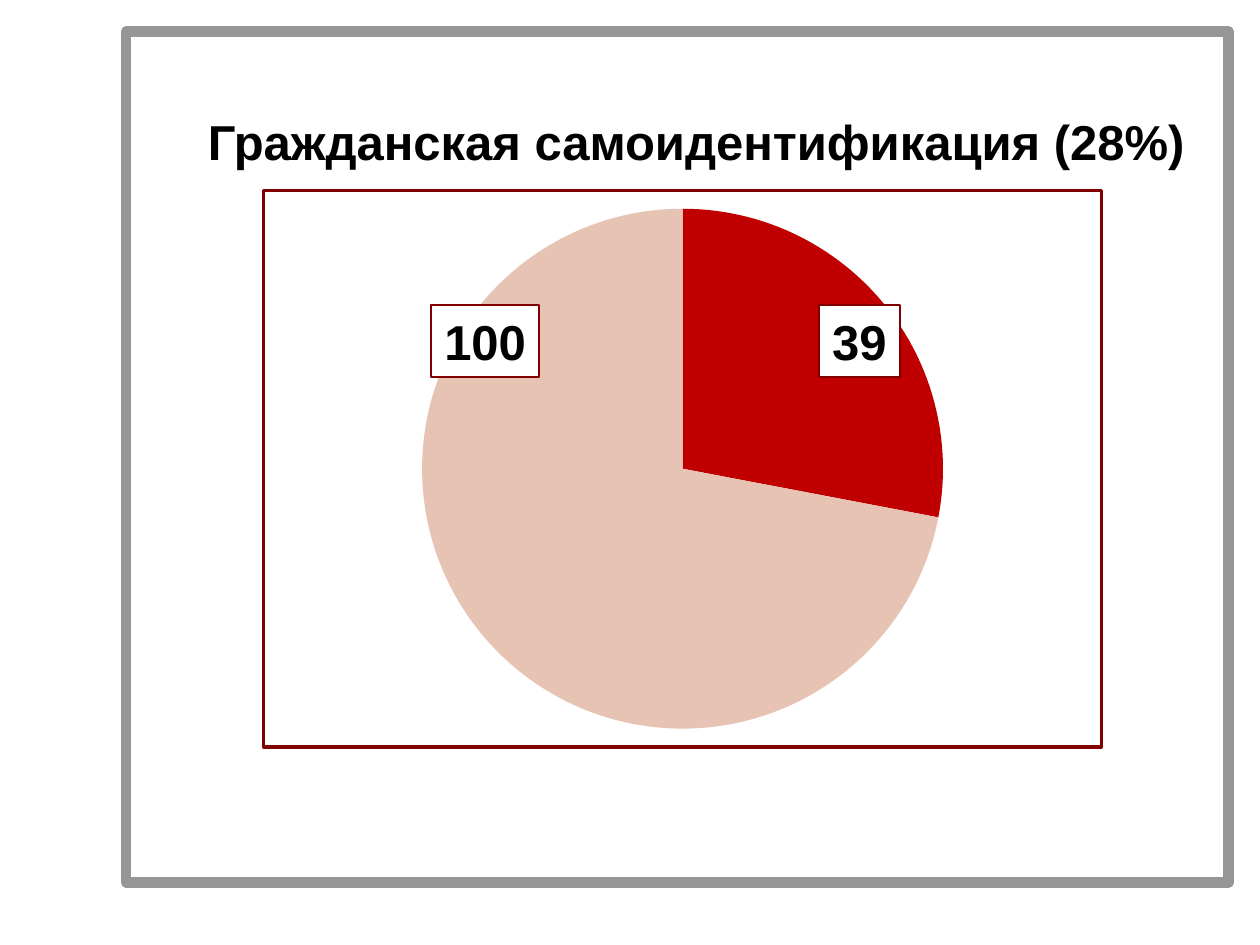
from lxml import etree
from pptx import Presentation
from pptx.chart.data import CategoryChartData
from pptx.dml.color import RGBColor
from pptx.enum.chart import XL_CHART_TYPE
from pptx.enum.shapes import MSO_SHAPE
from pptx.enum.text import MSO_ANCHOR, MSO_AUTO_SIZE, PP_ALIGN
from pptx.oxml import parse_xml
from pptx.oxml.ns import nsdecls, qn
from pptx.util import Cm, Pt

PIE = XL_CHART_TYPE.PIE
RECTANGLE = MSO_SHAPE.RECTANGLE
MIDDLE = MSO_ANCHOR.MIDDLE
FIT_SHAPE = MSO_AUTO_SIZE.SHAPE_TO_FIT_TEXT
CENTER = PP_ALIGN.CENTER

BLACK = RGBColor(0x00, 0x00, 0x00)
WHITE = RGBColor(0xFF, 0xFF, 0xFF)
GRAY = RGBColor(0x96, 0x96, 0x96)
MAROON = RGBColor(0x80, 0x00, 0x00)
RED = RGBColor(0xC0, 0x00, 0x00)
PINK = RGBColor(0xE6, 0xC3, 0xB3)

# Content: lengths in cm as left, top, width, height
TITLE = "Гражданская самоидентификация (28%)"
TITLE_BOX = (3.81, 2.11, 20.45, 1.45)
FRAME_BOX = (2.54, 0.64, 22.23, 17.15)
CHART_BOX = (5.29, 3.81, 16.94, 11.28)
SLICES = [("1", 28, RED), ("2", 72, PINK)]
LABELS = [("100", 8.69, 2.18), ("39", 16.51, 1.63)]  # text, left, width
LABEL_TOP, LABEL_HEIGHT = 6.15, 1.45
PIE_DIAMETER = 10.54


def cm(box):
    return [Cm(length) for length in box]


def add_box(slide, box, line_color, line_width):
    shape = slide.shapes.add_shape(RECTANGLE, *cm(box))
    shape.shadow.inherit = False
    shape.fill.solid()
    shape.fill.fore_color.rgb = WHITE
    shape.line.color.rgb = line_color
    shape.line.width = Pt(line_width)
    return shape


def write(shape, text):
    frame = shape.text_frame
    frame.word_wrap = False
    frame.auto_size = FIT_SHAPE
    frame.vertical_anchor = MIDDLE
    paragraph = frame.paragraphs[0]
    paragraph.text = text
    paragraph.alignment = CENTER
    font = paragraph.font
    font.name, font.size, font.bold = "Arial", Pt(28), True
    font.color.rgb = BLACK


def add_pie(slide):
    data = CategoryChartData()
    data.categories = [name for name, _, _ in SLICES]
    data.add_series("Series 1", [value for _, value, _ in SLICES])
    chart = slide.shapes.add_chart(PIE, *cm(CHART_BOX), data).chart
    chart.has_legend = chart.has_title = False
    chart.font.name, chart.font.size = "Times New Roman", Pt(18)
    chart.font.color.rgb = BLACK
    plot = chart.plots[0]
    plot.vary_by_categories = False
    for index, (_, _, color) in enumerate(SLICES):
        fill = plot.series[0].points[index].format.fill
        fill.solid()
        fill.fore_color.rgb = color

    # Centre the pie in the chart area
    plot_area = chart.element.find(".//" + qn("c:plotArea"))
    for old in plot_area.findall(qn("c:layout")):
        plot_area.remove(old)
    layout = etree.Element(qn("c:layout"))
    manual = etree.SubElement(layout, qn("c:manualLayout"))
    w, h = (PIE_DIAMETER / side for side in CHART_BOX[2:])
    settings = [("layoutTarget", "inner"), ("xMode", "edge"), ("yMode", "edge"),
                ("x", (1 - w) / 2), ("y", (1 - h) / 2), ("w", w), ("h", h)]
    for tag, value in settings:
        etree.SubElement(manual, qn("c:" + tag)).set("val", str(value))
    plot_area.insert(0, layout)

    # Chart border
    chart.element.find(qn("c:chart")).addnext(parse_xml(
        f'<c:spPr {nsdecls("c", "a")}><a:noFill/><a:ln w="{Pt(1.75)}">'
        f'<a:solidFill><a:srgbClr val="{MAROON}"/></a:solidFill></a:ln></c:spPr>'))


def main():
    presentation = Presentation()
    presentation.slide_width, presentation.slide_height = Cm(25.4), Cm(19.05)
    slide = presentation.slides.add_slide(presentation.slide_layouts[6])

    # Frame, title and chart
    add_box(slide, FRAME_BOX, GRAY, 6)
    write(slide.shapes.add_textbox(*cm(TITLE_BOX)), TITLE)
    add_pie(slide)

    # Value labels over the pie
    for text, left, width in LABELS:
        label = add_box(slide, (left, LABEL_TOP, width, LABEL_HEIGHT), MAROON, 1)
        write(label, text)

    presentation.save("out.pptx")


if __name__ == "__main__":
    main()
